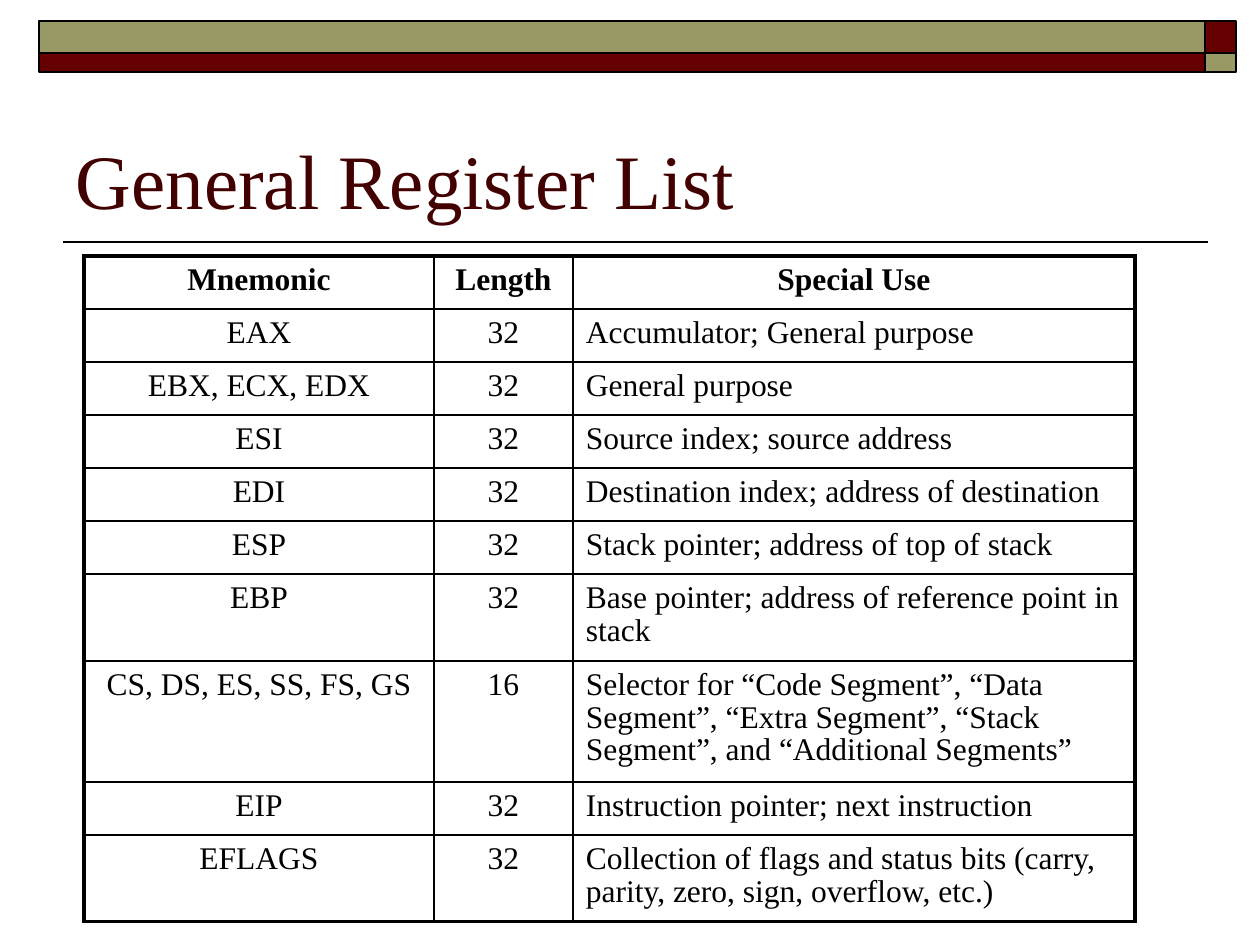
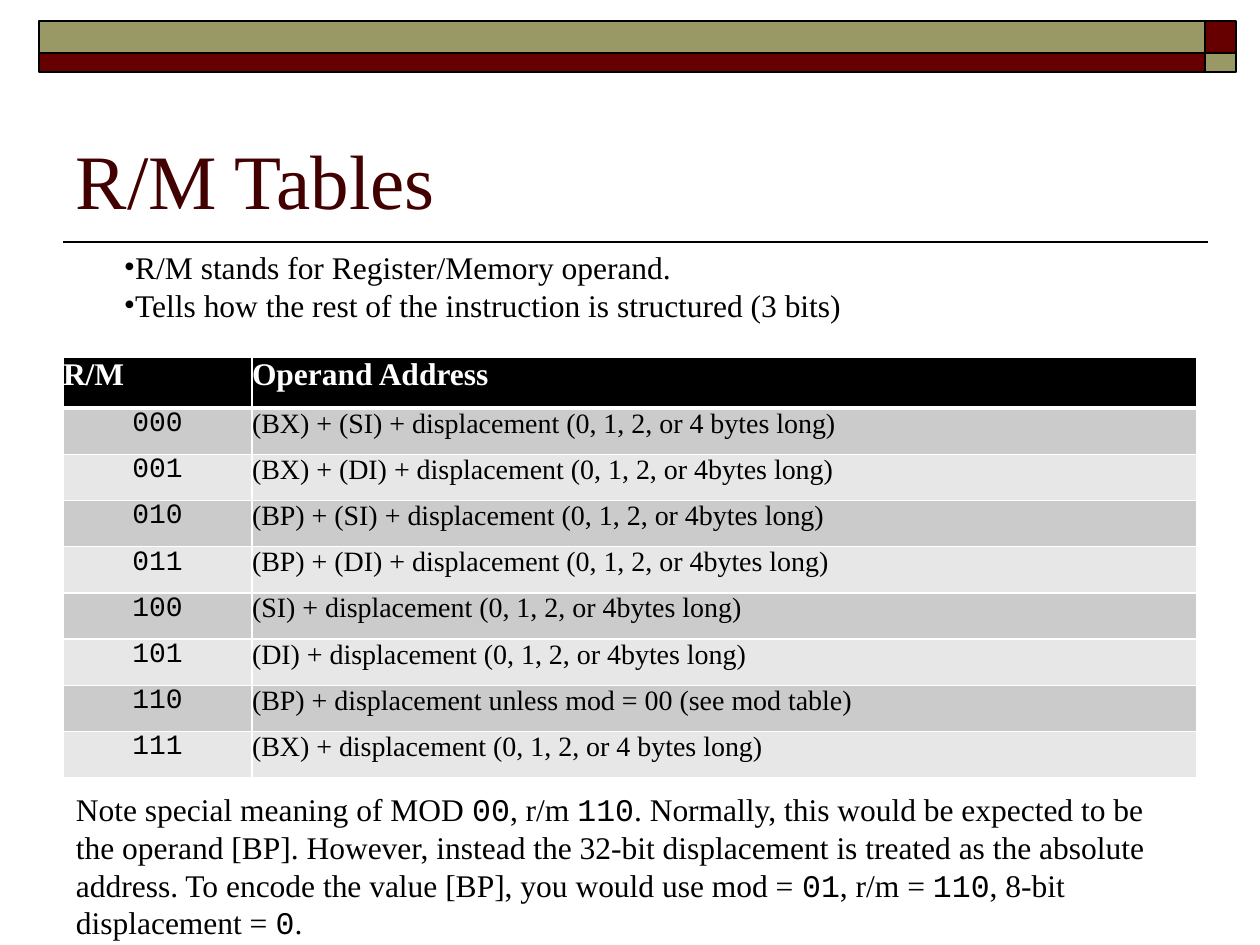
from lxml.etree import SubElement
from pptx import Presentation
from pptx.dml.color import RGBColor
from pptx.enum.shapes import MSO_CONNECTOR as Connector, MSO_SHAPE as Shape
from pptx.enum.text import MSO_ANCHOR as Anchor, PP_ALIGN as Align
from pptx.oxml import parse_xml
from pptx.oxml.ns import nsdecls, qn
from pptx.util import Pt

SERIF, MONO = "Times New Roman", "Courier New"
BLACK, WHITE = "000000", "FFFFFF"
MAROON, OLIVE, TITLE_COLOUR = "660000", "999966", "420000"
STRIPES = ("CBCBCB", "E7E7E7")
BAND_X, BAND_Y = (39, 1205, 1236), (21, 53, 72)
BAND_COLOURS = ((OLIVE, MAROON), (MAROON, OLIVE))
TEXT_LEFT, TEXT_WIDTH, RULE_Y, RULE_RIGHT = 63, 1134, 242, 1208
TEXT_INSETS = (13, 6, 13, 6)

REGISTERS_TITLE = "General Register List"
REGISTERS = [
    ("Mnemonic", "Length", "Special Use"),
    ("EAX", "32", "Accumulator; General purpose"),
    ("EBX, ECX, EDX", "32", "General purpose"),
    ("ESI", "32", "Source index; source address"),
    ("EDI", "32", "Destination index; address of destination"),
    ("ESP", "32", "Stack pointer; address of top of stack"),
    ("EBP", "32", "Base pointer; address of reference point in stack"),
    ("CS, DS, ES, SS, FS, GS", "16",
     "Selector for “Code Segment”, “Data Segment”, “Extra Segment”, “Stack Segment”, "
     "and “Additional Segments”"),
    ("EIP", "32", "Instruction pointer; next instruction"),
    ("EFLAGS", "32",
     "Collection of flags and status bits (carry, parity, zero, sign, overflow, etc.)"),
]
REGISTER_COLUMNS = (350, 139, 562)
REGISTER_LINES = (1, 1, 1, 1, 1, 1, 2, 3, 1, 2)
ROW_BASE, LINE_STEP = 19, 34

OPERANDS_TITLE = "R/M Tables"
OPERAND_POINTS = [
    "R/M stands for Register/Memory operand.",
    "Tells how the rest of the instruction is structured (3 bits)",
]
OPERANDS = [
    ("R/M", "Operand Address"),
    ("000", "(BX) + (SI) + displacement (0, 1, 2, or 4 bytes long)"),
    ("001", "(BX) + (DI) + displacement (0, 1, 2, or 4bytes long)"),
    ("010", "(BP) + (SI) + displacement (0, 1, 2, or 4bytes long)"),
    ("011", "(BP) + (DI) + displacement (0, 1, 2, or 4bytes long)"),
    ("100", "(SI) + displacement (0, 1, 2, or 4bytes long)"),
    ("101", "(DI) + displacement (0, 1, 2, or 4bytes long)"),
    ("110", "(BP) + displacement unless mod = 00 (see mod table)"),
    ("111", "(BX) + displacement (0, 1, 2, or 4 bytes long)"),
]
OPERAND_COLUMNS = (189, 945)
HEADER_HEIGHT, BODY_HEIGHT = 51, 370
NOTE = (
    "Note special meaning of MOD `00`, r/m `110`. Normally, this would be expected to be "
    "the operand [BP]. However, instead the 32-bit displacement is treated as the absolute "
    "address. To encode the value [BP], you would use mod = `01`, r/m = `110`, "
    "8-bit displacement = `0`."
)


def px(length):
    return round(length * 914400 / 126)


def colour(value):
    return RGBColor.from_string(value)


def style_span(span, size=18, font=SERIF, ink=BLACK, bold=False):
    span.font.size = Pt(size)
    span.font.name = font
    span.font.bold = bold
    span.font.color.rgb = colour(ink)


def set_insets(target, insets):
    target.margin_left, target.margin_top, target.margin_right, target.margin_bottom = map(px, insets)


def add_text(page, top, height, lines, anchor=Anchor.TOP, **style):
    box = page.shapes.add_textbox(px(TEXT_LEFT), px(top), px(TEXT_WIDTH), px(height))
    frame = box.text_frame
    frame.word_wrap = True
    frame.vertical_anchor = anchor
    set_insets(frame, TEXT_INSETS)
    frame.text = "\n".join(lines)
    for para in frame.paragraphs:
        for span in para.runs:
            style_span(span, **style)
    return frame


def add_bullets(frame, indent):
    for para in frame.paragraphs:
        properties = para._p.get_or_add_pPr()
        properties.set("marL", "0")
        properties.set("indent", str(px(indent)))
        tint = SubElement(properties, qn("a:buClr"))
        SubElement(tint, qn("a:srgbClr"), val=BLACK)
        SubElement(properties, qn("a:buSzPct"), val="102000")
        SubElement(properties, qn("a:buFont"), typeface=SERIF)
        SubElement(properties, qn("a:buChar"), char="•")


def add_page(deck, title):
    page = deck.slides.add_slide(deck.slide_layouts[6])
    rule = page.shapes.add_connector(
        Connector.STRAIGHT, px(RULE_RIGHT), px(RULE_Y), px(TEXT_LEFT), px(RULE_Y))
    rule.line.color.rgb = colour(BLACK)
    rule.line.width = Pt(1)
    SubElement(rule._element.spPr, qn("a:effectLst"))
    for top, bottom, fills in zip(BAND_Y, BAND_Y[1:], BAND_COLOURS):
        for left, right, fill in zip(BAND_X, BAND_X[1:], fills):
            band = page.shapes.add_shape(
                Shape.RECTANGLE, px(left), px(top), px(right - left), px(bottom - top))
            band.shadow.inherit = False
            band.fill.solid()
            band.fill.fore_color.rgb = colour(fill)
            band.line.color.rgb = colour(BLACK)
            band.line.width = Pt(1)
    add_text(page, 73, 158, [title], Anchor.BOTTOM, size=44, ink=TITLE_COLOUR)
    return page


def set_borders(cell, ink, weights):
    properties = cell._tc.get_or_add_tcPr()
    for place, (side, weight) in enumerate(zip("LRTB", weights)):
        properties.insert(place, parse_xml(
            f'<a:ln{side} {nsdecls("a")} w="{Pt(weight)}"><a:solidFill>'
            f'<a:srgbClr val="{ink}"/></a:solidFill></a:ln{side}>'))


def add_grid(page, left, top, columns, heights, rows, insets, ink, across, down, style_cell):
    table = page.shapes.add_table(
        len(rows), len(columns), px(left), px(top), px(sum(columns)), px(sum(heights))).table
    table.first_row = table.horz_banding = False
    for column, width in zip(table.columns, columns):
        column.width = px(width)
    for r, (values, height) in enumerate(zip(rows, heights)):
        table.rows[r].height = px(height)
        for c, value in enumerate(values):
            cell = table.cell(r, c)
            set_insets(cell, insets)
            cell.text = value
            style_cell(cell, cell.text_frame.paragraphs[0], r, c)
            set_borders(cell, ink, (down[c], down[c + 1], across[r], across[r + 1]))


def style_register(cell, para, row, column):
    cell.fill.background()
    para.alignment = Align.CENTER if row == 0 or column < 2 else Align.LEFT
    para.line_spacing = 0.93
    para.space_before = Pt(4)
    style_span(para.runs[0], bold=row == 0)


def style_operand(cell, para, row, column):
    header = row == 0
    cell.fill.solid()
    cell.fill.fore_color.rgb = colour(BLACK if header else STRIPES[(row - 1) % 2])
    if header:
        style_span(para.runs[0], ink=WHITE, bold=True)
    else:
        para.alignment = Align.LEFT if column else Align.CENTER
        style_span(para.runs[0], size=16, font=SERIF if column else MONO)


def build_registers(deck):
    page = add_page(deck, REGISTERS_TITLE)
    heights = [ROW_BASE + LINE_STEP * lines for lines in REGISTER_LINES]
    across = [2.25] + [1] * (len(REGISTERS) - 1) + [2.25]
    add_grid(page, 84, 256, REGISTER_COLUMNS, heights, REGISTERS, (13, 9, 13, 6),
             BLACK, across, (2.25, 1, 1, 2.25), style_register)


def build_operands(deck):
    page = add_page(deck, OPERANDS_TITLE)
    count = len(OPERANDS) - 1
    heights = [HEADER_HEIGHT] + [BODY_HEIGHT / count] * count
    across = [1, 3] + [1] * count
    add_grid(page, TEXT_LEFT, 357, OPERAND_COLUMNS, heights, OPERANDS, (0, 0, 0, 0),
             WHITE, across, (1, 1, 1), style_operand)
    add_bullets(add_text(page, 242, 115, OPERAND_POINTS), 48)
    para = add_text(page, 784, 165, []).paragraphs[0]
    for index, piece in enumerate(NOTE.split("`")):
        span = para.add_run()
        span.text = piece
        style_span(span, font=MONO if index % 2 else SERIF)


def main():
    deck = Presentation()
    deck.slide_width, deck.slide_height = px(1260), px(945)
    build_registers(deck)
    build_operands(deck)
    deck.save("out.pptx")


if __name__ == "__main__":
    main()
